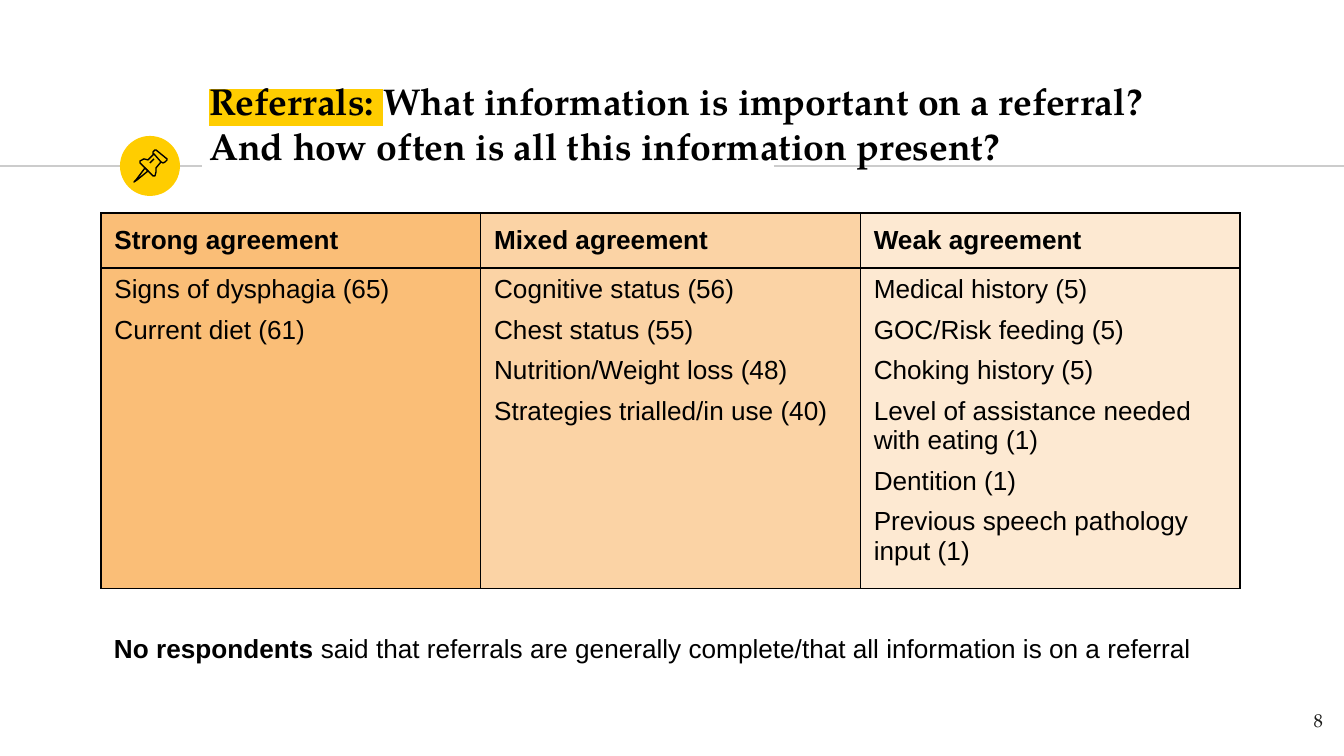
from lxml import etree
from pptx import Presentation
from pptx.dml.color import RGBColor
from pptx.enum.shapes import MSO_CONNECTOR, MSO_SHAPE
from pptx.enum.text import MSO_ANCHOR, PP_ALIGN
from pptx.oxml.ns import qn
from pptx.util import Pt

STRAIGHT = MSO_CONNECTOR.STRAIGHT
OVAL = MSO_SHAPE.OVAL
TOP, MIDDLE = MSO_ANCHOR.TOP, MSO_ANCHOR.MIDDLE
LEFT, RIGHT = PP_ALIGN.LEFT, PP_ALIGN.RIGHT

WIDTH, HEIGHT = 1344, 756
SCALE = 9144000 / WIDTH  # EMU per px

BLACK = RGBColor(0x00, 0x00, 0x00)
INK = RGBColor(0x1D, 0x1D, 0x1B)
GREY = RGBColor(0xCC, 0xCC, 0xCC)
YELLOW = RGBColor(0xFF, 0xCD, 0x00)
ORANGE = RGBColor(0xFA, 0xBE, 0x77)
PEACH = RGBColor(0xFB, 0xD3, 0xA5)
CREAM = RGBColor(0xFD, 0xE9, 0xD2)

SERIF, SANS = "TeX Gyre Pagella", "Arial"
HAIRLINE = Pt(0.75)

AGREEMENT = [
    ("Strong agreement", ORANGE, ["Signs of dysphagia (65)", "Current diet (61)"]),
    ("Mixed agreement", PEACH, [
        "Cognitive status (56)", "Chest status (55)",
        "Nutrition/Weight loss (48)", "Strategies trialled/in use (40)"]),
    ("Weak agreement", CREAM, [
        "Medical history (5)", "GOC/Risk feeding (5)", "Choking history (5)",
        "Level of assistance needed with eating (1)", "Dentition (1)",
        "Previous speech pathology input (1)"]),
]

# Pin outlines inside the 60 px disc: points, closed or open
PIN = [
    ([(25, 32), (16, 44), (14, 46), (17, 44), (28, 35)], True),
    ([(34, 18), (41, 26), (43, 27), (45, 26), (47, 24), (47, 23),
      (36, 14), (35, 14), (33, 16), (33, 18)], True),
    ([(34, 18), (28, 24), (24, 23), (20, 25), (20, 27), (33, 40),
      (35, 40), (36, 36), (36, 32), (41, 26)], False),
    ([(30, 27), (34, 23)], False),
]


def px(n):
    return round(n * SCALE)


def add_run(p, text, font, size, color=BLACK, bold=False, highlight=None):
    r = p.add_run()
    r.text = text
    r.font.size = Pt(size)
    r.font.bold = bold
    r.font.color.rgb = color
    r.font.name = font
    if highlight is not None:
        mark = etree.Element(qn("a:highlight"))
        etree.SubElement(mark, qn("a:srgbClr"), val=str(highlight))
        r.font._element.find(qn("a:solidFill")).addnext(mark)


def add_text(s, box, inset, anchor=TOP, align=LEFT):
    """Add a wrapped text box and return its first paragraph."""
    tf = s.shapes.add_textbox(*map(px, box)).text_frame
    tf.word_wrap = True
    tf.vertical_anchor = anchor
    tf.margin_left = tf.margin_right = px(13)
    tf.margin_top = tf.margin_bottom = px(inset)
    p = tf.paragraphs[0]
    p.alignment = align
    return p


def add_rule(s, x1, x2, y):
    sp = s.shapes.add_connector(STRAIGHT, px(x1), px(y), px(x2), px(y))
    sp.line.color.rgb = GREY
    sp.line.width = HAIRLINE
    etree.SubElement(sp._element.spPr, qn("a:effectLst"))


def add_pin_badge(s, x, y, size):
    disc = s.shapes.add_shape(OVAL, px(x), px(y), px(size), px(size))
    disc.shadow.inherit = False
    disc.fill.solid()
    disc.fill.fore_color.rgb = YELLOW
    disc.line.fill.background()
    pin = s.shapes.add_group_shape()
    for points, closed in PIN:
        outline = pin.shapes.build_freeform(*points[0], scale=SCALE)
        outline.add_line_segments(points[1:], close=closed)
        sp = outline.convert_to_shape(px(x), px(y))
        sp.shadow.inherit = False
        sp.fill.background()
        sp.line.color.rgb = BLACK
        sp.line.width = HAIRLINE


def add_heading(s, x, y, w, h):
    p = add_text(s, (x, y, w, h), 13, MIDDLE)
    add_run(p, "Referrals: ", SERIF, 20, bold=True, highlight=YELLOW)
    add_run(p, "What information is important on a referral? "
               "And how often is all this information present?", SERIF, 20, bold=True)


def set_borders(cell):
    tc_pr = cell._tc.get_or_add_tcPr()
    for i, side in enumerate(("a:lnL", "a:lnR", "a:lnT", "a:lnB")):
        ln = etree.Element(qn(side), w=str(HAIRLINE))
        fill = etree.SubElement(ln, qn("a:solidFill"))
        etree.SubElement(fill, qn("a:srgbClr"), val=str(BLACK))
        tc_pr.insert(i, ln)


def fill_cell(cell, lines, color, header):
    cell.fill.solid()
    cell.fill.fore_color.rgb = color
    cell.vertical_anchor = MIDDLE if header else TOP
    set_borders(cell)
    tf = cell.text_frame
    for i, line in enumerate(lines):
        p = tf.add_paragraph() if i else tf.paragraphs[0]
        p.space_before = Pt(6 if header else 0)
        p.space_after = Pt(6)
        add_run(p, line, SANS, 14, bold=header)


def add_agreement_table(s, x, y, w, h, header_h):
    table = s.shapes.add_table(2, len(AGREEMENT), px(x), px(y), px(w), px(h)).table
    table.first_row = table.horz_banding = False
    table.rows[0].height = px(header_h)
    table.rows[1].height = px(h - header_h)
    for col, (title, color, items) in enumerate(AGREEMENT):
        table.columns[col].width = px(w / len(AGREEMENT))
        fill_cell(table.cell(0, col), [title], color, True)
        fill_cell(table.cell(1, col), items, color, False)


def add_conclusion(s, x, y, w, h):
    p = add_text(s, (x, y, w, h), 7)
    add_run(p, "No respondents ", SANS, 14, bold=True)
    add_run(p, "said that referrals are generally complete/"
               "that all information is on a referral", SANS, 14)


def add_page_number(s, x, y, w, h):
    p = add_text(s, (x, y, w, h), 13, align=RIGHT)
    add_run(p, "8", SERIF, 10, INK)


def main():
    prs = Presentation()
    prs.slide_width, prs.slide_height = px(WIDTH), px(HEIGHT)
    s = prs.slides.add_slide(prs.slide_layouts[6])
    add_rule(s, 0, 202, 166)
    add_pin_badge(s, 120, 136, 60)
    add_rule(s, 774, WIDTH, 166)
    add_heading(s, 196, 91, 1027, 65)
    add_page_number(s, 1255, 698, 81, 58)
    add_agreement_table(s, 101, 213, 1139, 359, 55)
    add_conclusion(s, 101, 625, 1139, 46)
    prs.save("out.pptx")


if __name__ == "__main__":
    main()
